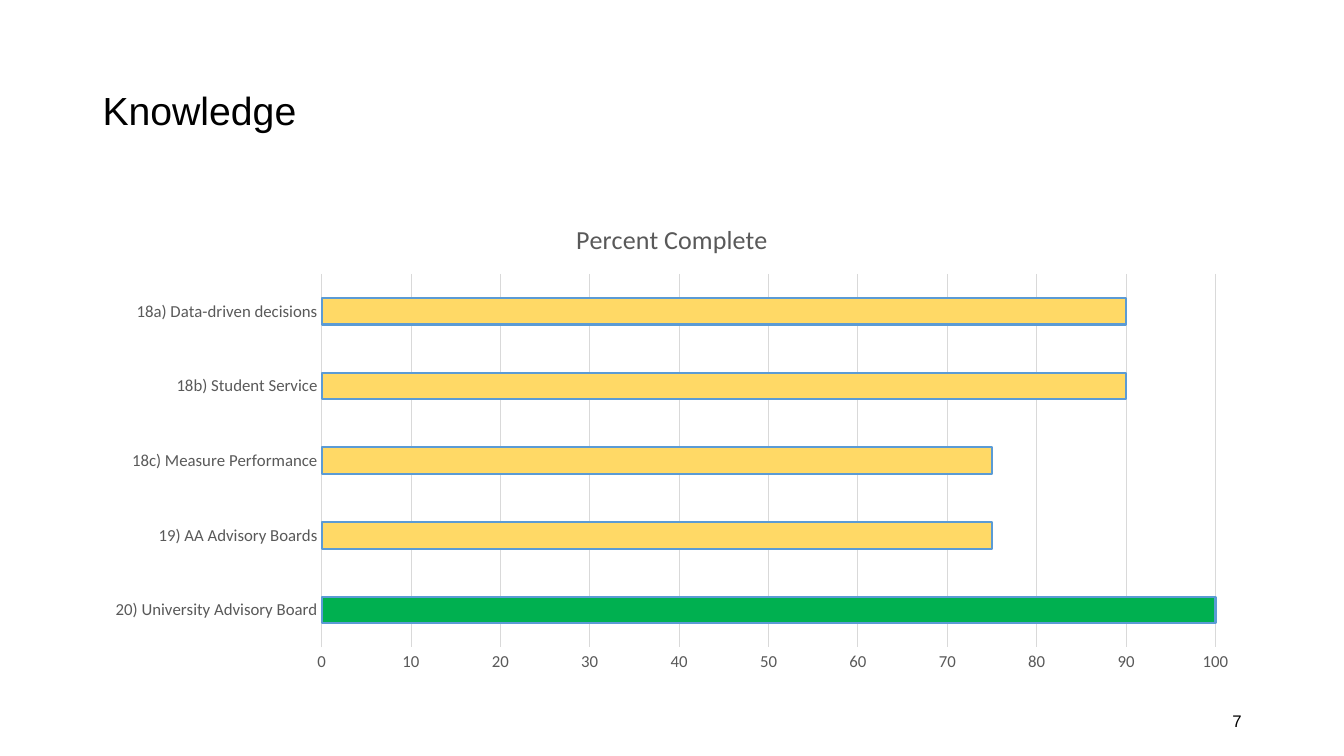
"""Build the Knowledge progress slide."""
from dataclasses import dataclass

from pptx import Presentation
from pptx.chart.data import CategoryChartData
from pptx.dml.color import RGBColor
from pptx.enum.chart import XL_CHART_TYPE as ChartType, XL_TICK_MARK as TickMark
from pptx.enum.text import MSO_ANCHOR as Anchor, PP_ALIGN as Align
from pptx.util import Cm, Pt


@dataclass(frozen=True)
class Theme:
    heading_font: str = "Arial"
    chart_font: str = "Calibri"
    ink: str = "000000"
    muted: str = "595959"
    grid: str = "D9D9D9"
    in_progress: str = "FFD966"
    complete: str = "00B050"
    outline: str = "5B9BD5"
    title_size: float = 28
    chart_title_size: float = 18.6
    label_size: float = 12
    grid_width: float = 0.75
    outline_width: float = 1.5


class SlideBuilder:
    def __init__(self, slide, theme):
        self.slide = slide
        self.theme = theme

    def style_font(self, font, name, size, color):
        font.name = name
        font.size = Pt(size)
        font.bold = False
        font.color.rgb = RGBColor.from_string(color)

    def style_line(self, line, color, width):
        line.color.rgb = RGBColor.from_string(color)
        line.width = Pt(width)

    def set_text(self, shape, text, size, alignment):
        frame = shape.text_frame
        frame.text = text
        frame.word_wrap = True
        frame.vertical_anchor = Anchor.MIDDLE
        paragraph = frame.paragraphs[0]
        paragraph.alignment = alignment
        self.style_font(paragraph.runs[0].font, self.theme.heading_font, size, self.theme.ink)
        return paragraph

    def title(self, text, left, top, width, height):
        shape = self.slide.shapes.title
        shape.left, shape.top, shape.width, shape.height = left, top, width, height
        self.set_text(shape, text, self.theme.title_size, Align.LEFT).line_spacing = 0.9

    def page_number(self, text, left, top, width, height):
        shape = self.slide.shapes.add_textbox(left, top, width, height)
        self.set_text(shape, text, self.theme.label_size, Align.RIGHT)

    def style_bar(self, bar_format, color):
        bar_format.fill.solid()
        bar_format.fill.fore_color.rgb = RGBColor.from_string(color)
        self.style_line(bar_format.line, self.theme.outline, self.theme.outline_width)

    def progress_chart(self, heading, progress, left, top, width, height):
        theme = self.theme
        data = CategoryChartData()
        data.categories = list(progress)
        data.add_series("Series 1", list(progress.values()))
        chart = self.slide.shapes.add_chart(
            ChartType.BAR_CLUSTERED, left, top, width, height, data).chart
        self.style_font(chart.font, theme.chart_font, theme.label_size, theme.muted)
        chart.has_legend = False
        chart.has_title = True
        title_frame = chart.chart_title.text_frame
        title_frame.text = heading
        self.style_font(title_frame.paragraphs[0].runs[0].font,
                        theme.chart_font, theme.chart_title_size, theme.muted)

        for axis in (chart.category_axis, chart.value_axis):
            axis.major_tick_mark = axis.minor_tick_mark = TickMark.NONE
            self.style_font(axis.tick_labels.font, theme.chart_font, theme.label_size, theme.muted)
        self.style_line(chart.category_axis.format.line, theme.grid, theme.grid_width)
        value_axis = chart.value_axis
        value_axis.format.line.fill.background()
        value_axis.minimum_scale, value_axis.maximum_scale, value_axis.major_unit = 0, 100, 10
        value_axis.has_major_gridlines = True
        self.style_line(value_axis.major_gridlines.format.line, theme.grid, theme.grid_width)

        plot = chart.plots[0]
        plot.gap_width = 182
        plot.vary_by_categories = False
        series = plot.series[0]
        series.invert_if_negative = False
        self.style_bar(series.format, theme.in_progress)
        for index, percent in enumerate(progress.values()):
            if percent == 100:
                self.style_bar(series.points[index].format, theme.complete)


def main():
    presentation = Presentation()
    presentation.slide_width, presentation.slide_height = Cm(33.87), Cm(19.05)
    slide = presentation.slides.add_slide(presentation.slide_layouts[5])
    builder = SlideBuilder(slide, Theme())
    left, width = Cm(2.33), Cm(29.21)
    builder.title("Knowledge", left, Cm(1.01), width, Cm(3.68))
    progress = {
        "20) University Advisory Board": 100,
        "19) AA Advisory Boards": 75,
        "18c) Measure Performance": 75,
        "18b) Student Service": 90,
        "18a) Data-driven decisions": 90,
    }
    builder.progress_chart("Percent Complete", progress, left, Cm(5.07), width, Cm(12.09))
    number_width = Cm(7.62)
    builder.page_number("7", left + width - number_width, Cm(17.66), number_width, Cm(1.01))
    presentation.save("out.pptx")


if __name__ == "__main__":
    main()
